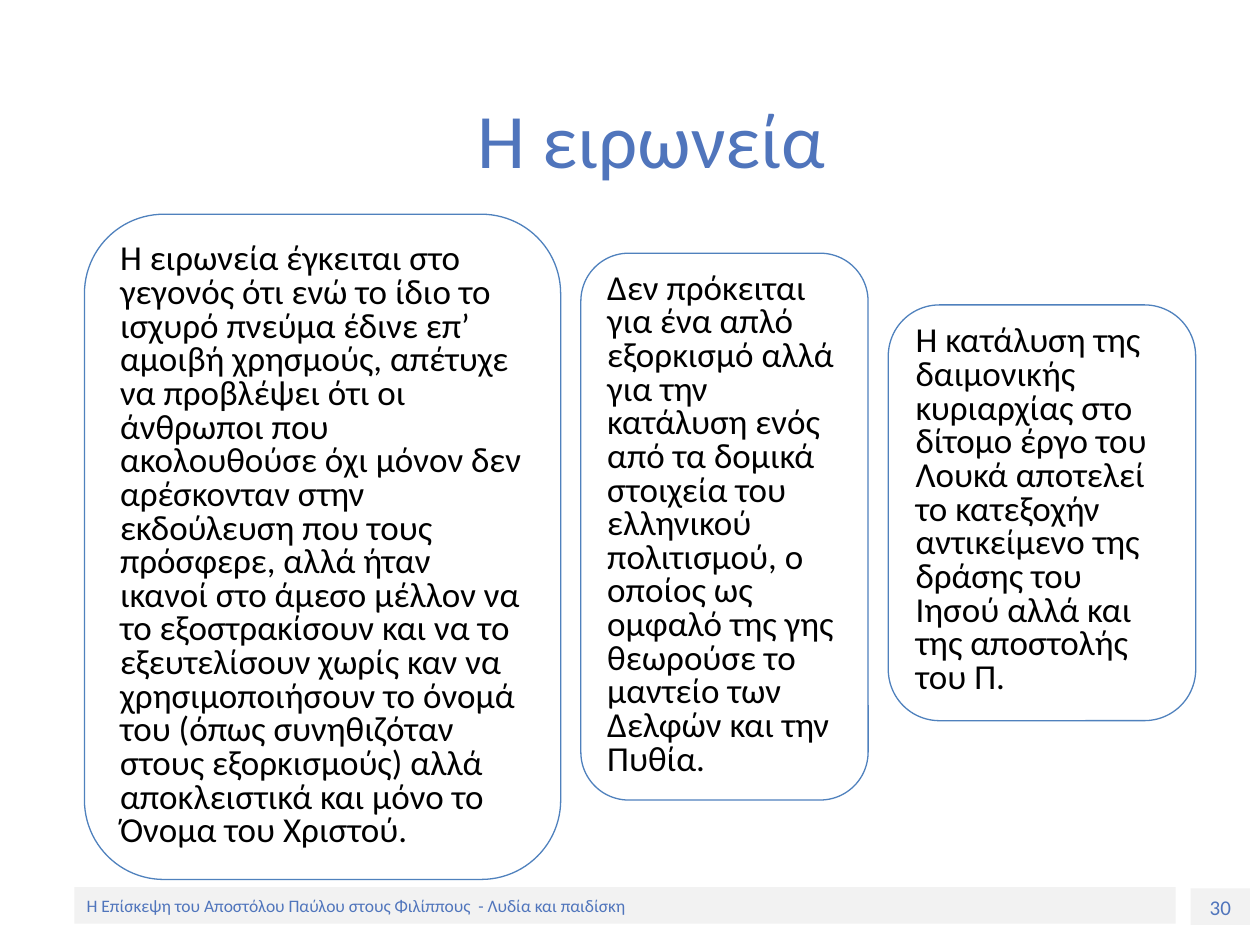
from dataclasses import dataclass

from pptx import Presentation
from pptx.dml.color import RGBColor
from pptx.enum.shapes import MSO_SHAPE
from pptx.enum.text import MSO_ANCHOR, PP_ALIGN
from pptx.util import Inches, Pt

RECT, ROUND = MSO_SHAPE.RECTANGLE, MSO_SHAPE.ROUNDED_RECTANGLE
TOP, MIDDLE = MSO_ANCHOR.TOP, MSO_ANCHOR.MIDDLE
LEFT, CENTER = PP_ALIGN.LEFT, PP_ALIGN.CENTER

COLS, ROWS = 100, 75
FONT = "Calibri"
BLUE, OUTLINE, GREY, BLACK = "5075BC", "4F81BD", "F2F2F2", "000000"
LEFT_COL, GAP = 6.7, 1.6
TITLE_ONLY = 5


@dataclass
class Bar:
    col: float
    row: float
    cols: float
    text: str
    size: int
    align: PP_ALIGN
    anchor: MSO_ANCHOR


@dataclass
class Panel:
    row: float
    cols: float
    rows: float
    anchor: MSO_ANCHOR
    text: str


BARS = [
    Bar(94.5, 70.5, 4.7, "30", 12, CENTER, TOP),
    Bar(5.9, 70.4, 87.4,
        "Η Επίσκεψη του Αποστόλου Παύλου στους Φιλίππους  - Λυδία και παιδίσκη",
        10, LEFT, MIDDLE),
]

PANELS = [
    Panel(17, 37.8, 52.8, MIDDLE,
          "Η ειρωνεία έγκειται στο γεγονός ότι ενώ το ίδιο το ισχυρό πνεύμα "
          "έδινε επ’ αμοιβή χρησμούς, απέτυχε να προβλέψει ότι οι άνθρωποι που "
          "ακολουθούσε όχι μόνον δεν αρέσκονταν στην εκδούλευση που τους "
          "πρόσφερε, αλλά ήταν ικανοί στο άμεσο μέλλον να το εξοστρακίσουν και "
          "να το εξευτελίσουν χωρίς καν να χρησιμοποιήσουν το όνομά του (όπως "
          "συνηθιζόταν στους εξορκισμούς) αλλά αποκλειστικά και μόνο το Όνομα "
          "του Χριστού."),
    Panel(20.1, 22.8, 43.4, TOP,
          "Δεν πρόκειται για ένα απλό εξορκισμό αλλά για την κατάλυση ενός από "
          "τα δομικά στοιχεία του ελληνικού πολιτισμού, ο οποίος ως ομφαλό της "
          "γης θεωρούσε το μαντείο των Δελφών και την Πυθία."),
    Panel(24.2, 24.4, 33, TOP,
          "Η κατάλυση της δαιμονικής κυριαρχίας στο δίτομο έργο του Λουκά "
          "αποτελεί το κατεξοχήν αντικείμενο της δράσης του Ιησού αλλά και της "
          "αποστολής του Π."),
]

prs = Presentation()
prs.slide_width, prs.slide_height = Inches(10), Inches(7.5)


def x(cols: float) -> int:
    return round(prs.slide_width * cols / COLS)


def y(rows: float) -> int:
    return round(prs.slide_height * rows / ROWS)


def rgb(value: str) -> RGBColor:
    return RGBColor.from_string(value)


def write(sp, text: str, size: int, color: str, align: PP_ALIGN,
          anchor: MSO_ANCHOR, spacing: float = 1.0) -> None:
    tf = sp.text_frame
    tf.word_wrap = True
    tf.vertical_anchor = anchor
    p = tf.paragraphs[0]
    p.text = text
    p.alignment = align
    p.line_spacing = spacing
    p.font.name, p.font.size = FONT, Pt(size)
    p.font.color.rgb = rgb(color)


def draw_bar(s, bar: Bar) -> None:
    sp = s.shapes.add_shape(RECT, x(bar.col), y(bar.row), x(bar.cols), y(2.9))
    sp.shadow.inherit = False
    sp.fill.solid()
    sp.fill.fore_color.rgb = rgb(GREY)
    sp.line.fill.background()
    write(sp, bar.text, bar.size, BLUE, bar.align, bar.anchor)


def draw_panel(s, panel: Panel, col: float) -> None:
    sp = s.shapes.add_shape(ROUND, x(col), y(panel.row), x(panel.cols), y(panel.rows))
    sp.shadow.inherit = False
    sp.fill.background()
    sp.line.color.rgb = rgb(OUTLINE)
    sp.line.width = Pt(0.75)
    write(sp, panel.text, 20, BLACK, LEFT, panel.anchor, 0.8)


def main() -> None:
    s = prs.slides.add_slide(prs.slide_layouts[TITLE_ONLY])
    title = s.shapes.title
    title.left, title.top, title.width, title.height = x(LEFT_COL), y(4.7), x(90), y(12.5)
    write(title, "Η ειρωνεία", 44, BLUE, CENTER, MIDDLE)

    for bar in BARS:
        draw_bar(s, bar)

    col = LEFT_COL
    for panel in PANELS:
        draw_panel(s, panel, col)
        col += panel.cols + GAP

    prs.save("out.pptx")


if __name__ == "__main__":
    main()
